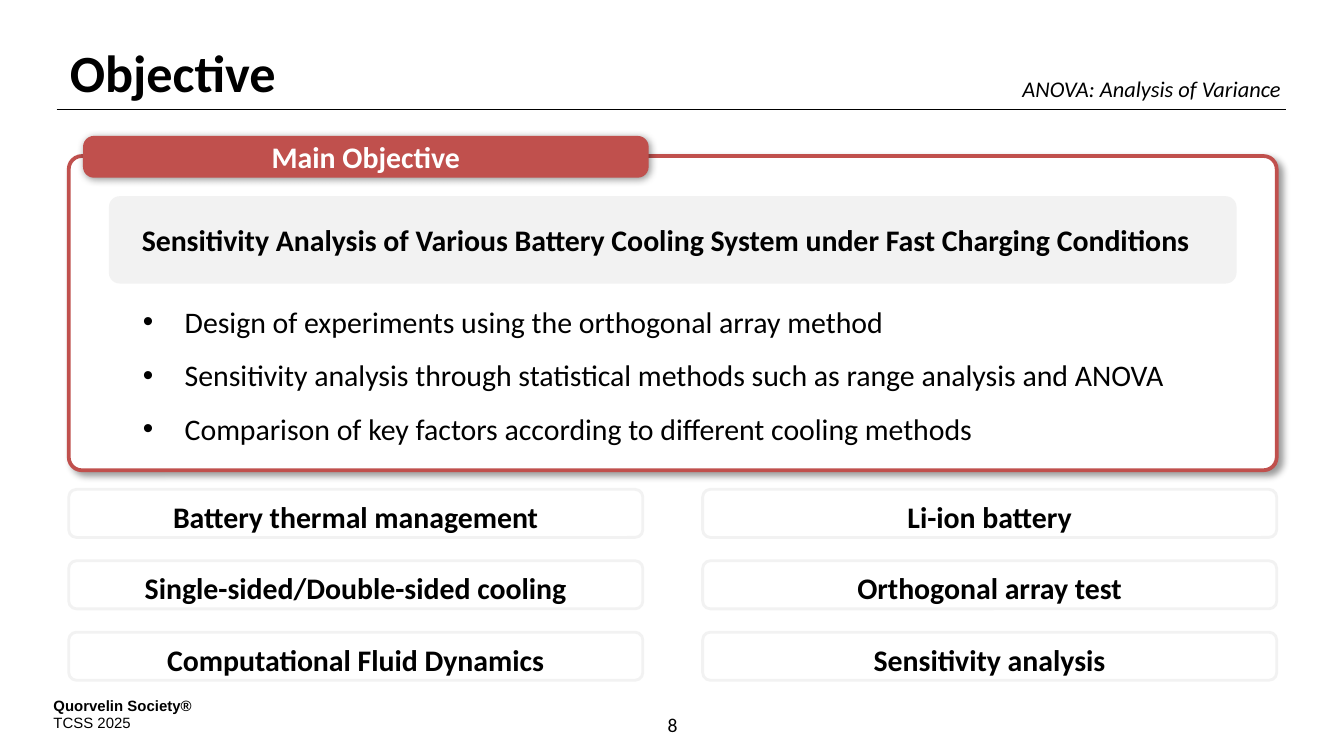
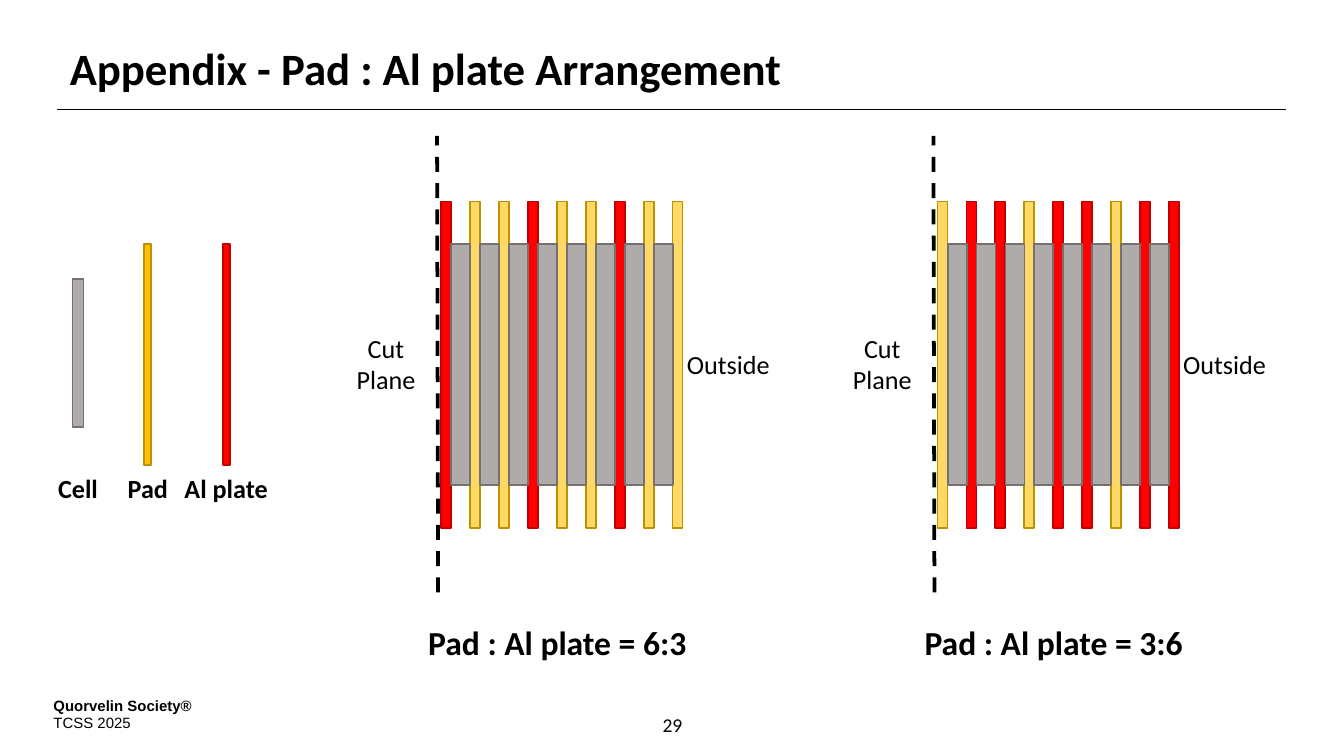
from dataclasses import dataclass
from typing import Optional

from lxml.etree import SubElement
from pptx import Presentation
from pptx.dml.color import RGBColor
from pptx.enum.dml import MSO_LINE
from pptx.enum.shapes import MSO_CONNECTOR, MSO_SHAPE
from pptx.enum.text import MSO_ANCHOR as Anchor, PP_ALIGN as Align
from pptx.oxml.ns import qn
from pptx.util import Cm, Pt

BLACK = RGBColor(0x00, 0x00, 0x00)
WHITE = RGBColor(0xFF, 0xFF, 0xFF)
BRICK = RGBColor(0xC0, 0x50, 0x4D)
PALE_GREY = RGBColor(0xF2, 0xF2, 0xF2)
CELL_GREY = RGBColor(0xAF, 0xAB, 0xAB)
CELL_EDGE = RGBColor(0x76, 0x71, 0x71)
AMBER = RGBColor(0xFF, 0xC0, 0x00)
PAD_YELLOW = RGBColor(0xFF, 0xD9, 0x66)
PAD_EDGE = RGBColor(0xBF, 0x90, 0x00)
RED = RGBColor(0xFF, 0x00, 0x00)
RED_EDGE = RGBColor(0xC0, 0x00, 0x00)

GOALS = (
    "Design of experiments using the orthogonal array method",
    "Sensitivity analysis through statistical methods such as range analysis and ANOVA",
    "Comparison of key factors according to different cooling methods",
)
KEYWORDS = (
    ("Battery thermal management", "Li-ion battery"),
    ("Single-sided/Double-sided cooling", "Orthogonal array test"),
    ("Computational Fluid Dynamics", "Sensitivity analysis"),
)
PLATE_PITCH = 4.37 / 8


@dataclass(frozen=True)
class Box:
    """Position and size in centimetres."""

    left: float
    top: float
    width: float
    height: float

    def lengths(self) -> tuple:
        """Return the four values as lengths."""
        return Cm(self.left), Cm(self.top), Cm(self.width), Cm(self.height)


@dataclass(frozen=True)
class Look:
    """Fill, outline, corner and shadow of a panel."""

    fill: Optional[RGBColor] = None
    edge: Optional[RGBColor] = None
    weight: float = 1
    corner: Optional[float] = None
    shadow: float = 0


@dataclass(frozen=True)
class LegendItem:
    """A sample bar with its caption."""

    label: str
    label_left: float
    label_width: float
    bar: Box
    look: Look


@dataclass(frozen=True)
class Stack:
    """A cell stack whose order lists pads (P) and Al plates (A)."""

    left: float
    order: str
    ratio: str


CELL = Look(CELL_GREY, CELL_EDGE)
PLATES = {"P": Look(PAD_YELLOW, PAD_EDGE), "A": Look(RED, RED_EDGE)}
LEGEND = (
    LegendItem("Cell", 0.51, 1.93, Box(1.37, 5.28, 0.21, 2.79), CELL),
    LegendItem("Pad", 1.83, 1.93, Box(2.72, 4.62, 0.14, 4.17), Look(AMBER, PAD_EDGE)),
    LegendItem("Al plate", 3.12, 2.31, Box(4.21, 4.62, 0.14, 4.17), PLATES["A"]),
)
STACKS = (Stack(8.34, "APPAPPAPP", "6:3"), Stack(17.72, "PAAPAAPAA", "3:6"))


def write(paragraph, text: str, *, size: float, font: str = "Calibri",
          color: RGBColor = BLACK, bold: bool = False, italic: bool = False,
          align: Align = Align.LEFT, spacing: Optional[float] = None,
          bullet: bool = False) -> None:
    """Put formatted text into a paragraph."""
    paragraph.alignment = align
    if spacing:
        paragraph.line_spacing = spacing
    if bullet:
        properties = paragraph._p.get_or_add_pPr()
        properties.set("marL", str(Cm(0.79)))
        properties.set("indent", str(-Cm(0.79)))
        SubElement(properties, qn("a:buFont"), typeface="Arial")
        SubElement(properties, qn("a:buChar"), char="•")
    run = paragraph.add_run()
    run.text = text
    run.font.name = font
    run.font.size = Pt(size)
    run.font.bold = bold
    run.font.italic = italic
    run.font.color.rgb = color


def prepare(frame, anchor: Anchor, inset: float = 0.25):
    """Set wrapping, anchor and insets, and return the first paragraph."""
    frame.word_wrap = True
    frame.vertical_anchor = anchor
    frame.margin_left = frame.margin_right = Cm(inset)
    frame.margin_top = frame.margin_bottom = Cm(0.13)
    return frame.paragraphs[0]


def add_label(slide, box: Box, text: str, anchor: Anchor = Anchor.TOP, **style):
    """Add a text box and return its frame."""
    frame = slide.shapes.add_textbox(*box.lengths()).text_frame
    write(prepare(frame, anchor), text, **style)
    return frame


def add_panel(slide, box: Box, look: Look):
    """Add a plain or rounded rectangle."""
    kind = MSO_SHAPE.RECTANGLE if look.corner is None else MSO_SHAPE.ROUNDED_RECTANGLE
    panel = slide.shapes.add_shape(kind, *box.lengths())
    if look.corner is not None:
        panel.adjustments[0] = look.corner
    if look.fill is None:
        panel.fill.background()
    else:
        panel.fill.solid()
        panel.fill.fore_color.rgb = look.fill
    if look.edge is None:
        panel.line.fill.background()
    else:
        panel.line.color.rgb = look.edge
        panel.line.width = Pt(look.weight)
    panel.shadow.inherit = False
    if look.shadow:
        effects = panel._element.spPr.find(qn("a:effectLst"))
        shadow = SubElement(effects, qn("a:outerShdw"), blurRad=str(Pt(4)),
                            dist=str(Pt(look.shadow)), dir="2700000",
                            algn="tl", rotWithShape="0")
        tint = SubElement(shadow, qn("a:srgbClr"), val=str(BLACK))
        SubElement(tint, qn("a:alpha"), val="40000")
    return panel


def add_line(slide, start: tuple, end: tuple, weight: float, dashed: bool = False) -> None:
    """Add a black straight line between two points."""
    line = slide.shapes.add_connector(
        MSO_CONNECTOR.STRAIGHT, *(Cm(value) for value in start + end))
    line.line.color.rgb = BLACK
    line.line.width = Pt(weight)
    if dashed:
        line.line.dash_style = MSO_LINE.DASH
    SubElement(line._element.spPr, qn("a:effectLst"))


def add_page(deck, title: str, title_size: float, number: int):
    """Add a slide with its title, rule, footer and page number."""
    slide = deck.slides.add_slide(deck.slide_layouts[6])
    add_line(slide, (1.07, 2.07), (24.31, 2.07), 0.5)
    footer = add_label(slide, Box(0.76, 13.03, 7.29, 0.94), "Quorvelin Society®",
                       size=8, font="Arial", bold=True)
    write(footer.add_paragraph(), "TCSS 2025", size=8, font="Arial")
    add_label(slide, Box(9.98, 13.34, 5.46, 0.74), str(number),
              size=10.5, align=Align.CENTER)
    add_label(slide, Box(1.07, 0.76, 23.24, 1.12), title,
              size=title_size, bold=True, spacing=0.9)
    return slide


def add_objective(deck) -> None:
    """Build the objective slide."""
    slide = add_page(deck, "Objective", 28, 8)
    add_label(slide, Box(18.47, 1.3, 5.99, 0.76), "ANOVA: Analysis of Variance",
              size=12, italic=True, align=Align.RIGHT)
    add_panel(slide, Box(1.3, 2.95, 22.83, 5.94), Look(WHITE, BRICK, 2, 0.042, 3))
    add_panel(slide, Box(2.06, 3.71, 21.31, 1.65), Look(PALE_GREY, corner=0.123))

    goals = add_panel(slide, Box(2.41, 5.23, 20.65, 3.38), Look(corner=0.043)).text_frame
    paragraph = prepare(goals, Anchor.MIDDLE)
    for index, goal in enumerate(GOALS):
        if index:
            paragraph = goals.add_paragraph()
        write(paragraph, goal, size=16, spacing=1.5, bullet=True)

    heading = add_panel(slide, Box(1.57, 2.57, 10.69, 0.79),
                        Look(BRICK, corner=0.262, shadow=1))
    write(prepare(heading.text_frame, Anchor.MIDDLE), "Main Objective",
          size=16, bold=True, color=WHITE, align=Align.CENTER)
    statement = add_panel(slide, Box(2.41, 3.71, 20.57, 1.65), Look(corner=0.043))
    write(prepare(statement.text_frame, Anchor.MIDDLE),
          "Sensitivity Analysis of Various Battery Cooling System"
          " under Fast Charging Conditions", size=16, bold=True)

    for row, pair in enumerate(KEYWORDS):
        for column, keyword in enumerate(pair):
            tile = add_panel(
                slide, Box(1.3 + 11.98 * column, 9.25 + 1.35 * row, 10.85, 0.91),
                Look(edge=PALE_GREY, weight=1.5, corner=0.162))
            write(prepare(tile.text_frame, Anchor.TOP, 0.61), keyword,
                  size=16, bold=True, align=Align.CENTER)


def add_stack(slide, stack: Stack) -> None:
    """Draw one arrangement of plates and cells with its captions."""
    left = stack.left
    for index, plate in enumerate(stack.order):
        add_panel(slide, Box(left + PLATE_PITCH * index, 3.81, 0.19, 6.17), PLATES[plate])
    for index in range(len(stack.order) - 1):
        add_panel(slide, Box(left + 0.19 + PLATE_PITCH * index, 4.62, 0.36, 4.55), CELL)
    centred = {"anchor": Anchor.MIDDLE, "align": Align.CENTER}
    add_label(slide, Box(left - 0.74, 11.63, 5.87, 1.02),
              f"Pad : Al plate = {stack.ratio}", size=18, bold=True, **centred)
    add_label(slide, Box(left - 2.01, 6.15, 1.93, 1.45), "Cut Plane", size=14, **centred)
    add_line(slide, (left - 0.06, 11.2), (left - 0.08, 2.57), 2, dashed=True)
    add_label(slide, Box(left + 4.32, 6.45, 2.21, 0.86), "Outside", size=14, **centred)


def add_arrangement(deck) -> None:
    """Build the appendix slide on pad and plate arrangement."""
    slide = add_page(deck, "Appendix - Pad : Al plate Arrangement", 24, 29)
    for item in LEGEND:
        add_panel(slide, item.bar, item.look)
        add_label(slide, Box(item.label_left, 8.79, item.label_width, 0.86), item.label,
                  Anchor.MIDDLE, size=14, bold=True, align=Align.CENTER)
    for stack in STACKS:
        add_stack(slide, stack)


def main() -> None:
    """Build and save the deck."""
    deck = Presentation()
    deck.slide_width, deck.slide_height = Cm(25.4), Cm(14.29)
    add_objective(deck)
    add_arrangement(deck)
    deck.save("out.pptx")


if __name__ == "__main__":
    main()
